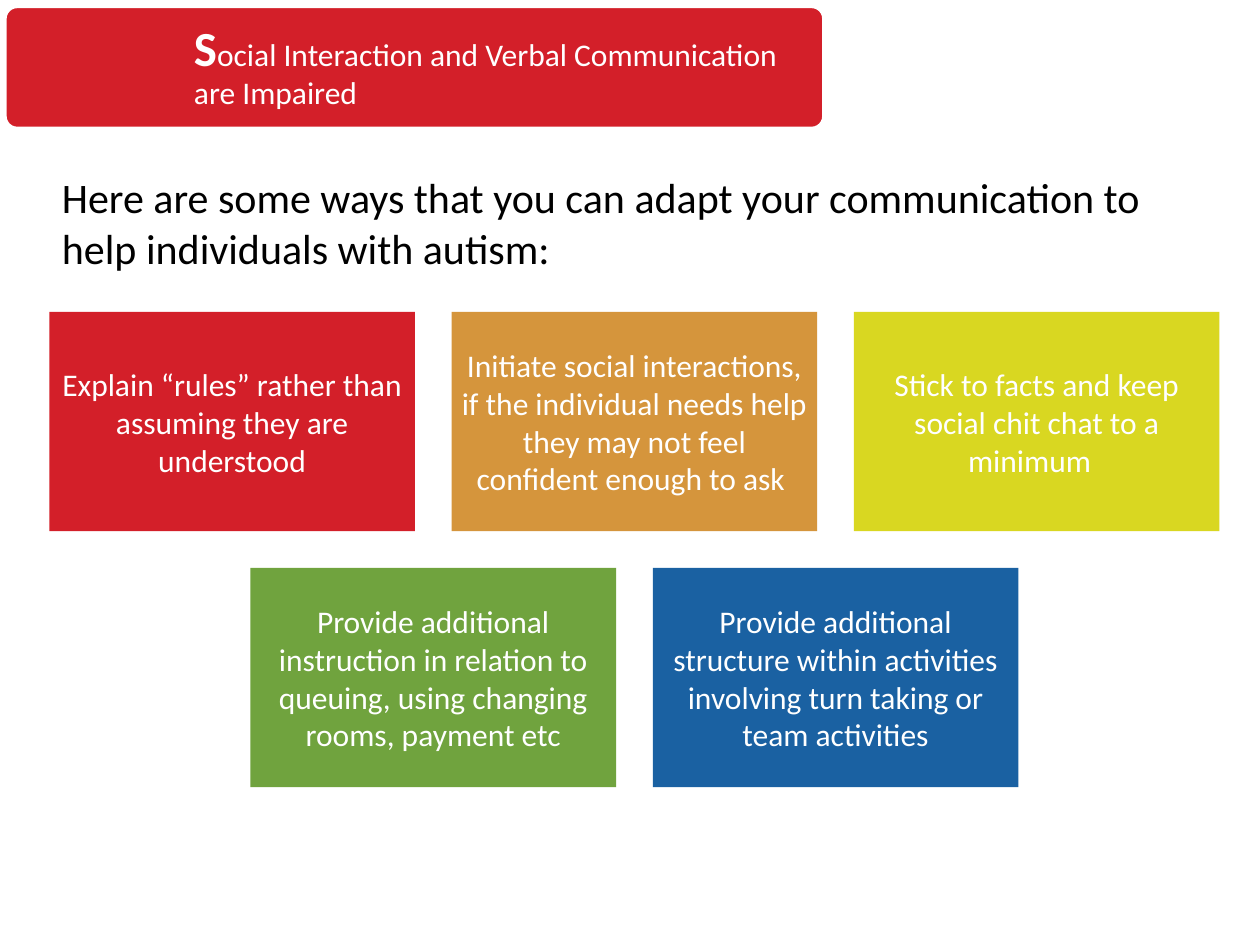
from dataclasses import dataclass

import pptx
import pptx.dml.color
import pptx.enum.shapes
import pptx.enum.text
import pptx.util
from pptx.util import Cm

WHITE = "FFFFFF"
BLACK = "000000"
RED = "D31F29"
CARD_WIDTH, CARD_HEIGHT, GAP = 7.37, 4.42, 0.74
CARDS_CENTER, CARDS_TOP = 12.79, 6.29


@dataclass
class Box:
    left: float
    top: float
    width: float
    height: float

    def lengths(self) -> tuple:
        return Cm(self.left), Cm(self.top), Cm(self.width), Cm(self.height)


@dataclass
class Card:
    text: str
    fill: str


CARD_ROWS = [
    [
        Card("Explain “rules” rather than assuming they are understood", RED),
        Card("Initiate social interactions, if the individual needs help "
             "they may not feel confident enough to ask ", "D5953C"),
        Card("Stick to facts and keep social chit chat to a minimum  ", "D9D721"),
    ],
    [
        Card("Provide additional instruction in relation to queuing, "
             "using changing rooms, payment etc", "70A33E"),
        Card("Provide additional structure within activities involving "
             "turn taking or team activities", "1A61A2"),
    ],
]


def color(value: str) -> pptx.dml.color.RGBColor:
    return pptx.dml.color.RGBColor.from_string(value)


def add_text(paragraph, text: str, *, size: float = 18, fill: str = WHITE,
             bold: bool = False) -> None:
    run = paragraph.add_run()
    run.text = text
    run.font.name = "Calibri"
    run.font.size = pptx.util.Pt(size)
    run.font.bold = bold
    run.font.color.rgb = color(fill)


def format_frame(frame, *, inset: float, middle: bool = True) -> None:
    anchors = pptx.enum.text.MSO_ANCHOR
    frame.word_wrap = True
    frame.auto_size = pptx.enum.text.MSO_AUTO_SIZE.NONE
    frame.vertical_anchor = anchors.MIDDLE if middle else anchors.TOP
    frame.margin_left = frame.margin_right = Cm(inset)
    frame.margin_top = frame.margin_bottom = Cm(inset)


def add_block(slide, kind, box: Box, fill: str):
    shape = slide.shapes.add_shape(kind, *box.lengths())
    shape.shadow.inherit = False
    shape.fill.solid()
    shape.fill.fore_color.rgb = color(fill)
    shape.line.fill.background()
    return shape


def add_card(slide, card: Card, left: float, top: float) -> None:
    box = Box(left, top, CARD_WIDTH, CARD_HEIGHT)
    shape = add_block(slide, pptx.enum.shapes.MSO_SHAPE.RECTANGLE, box, card.fill)
    format_frame(shape.text_frame, inset=0.17)
    paragraph = shape.text_frame.paragraphs[0]
    paragraph.alignment = pptx.enum.text.PP_ALIGN.CENTER
    add_text(paragraph, card.text)


def add_cards(slide) -> None:
    for row_index, row in enumerate(CARD_ROWS):
        row_width = len(row) * (CARD_WIDTH + GAP) - GAP
        top = CARDS_TOP + row_index * (CARD_HEIGHT + GAP)
        for column, card in enumerate(row):
            left = CARDS_CENTER - row_width / 2 + column * (CARD_WIDTH + GAP)
            add_card(slide, card, left, top)


def add_introduction(slide) -> None:
    text_box = slide.shapes.add_textbox(*Box(1, 3.33, 23.6, 2.31).lengths())
    frame = text_box.text_frame
    format_frame(frame, inset=0.25, middle=False)
    frame.margin_top = frame.margin_bottom = Cm(0.13)
    add_text(frame.paragraphs[0],
             "Here are some ways that you can adapt your communication to "
             "help individuals with autism:", size=24, fill=BLACK)


def add_title(slide) -> None:
    banner = add_block(slide, pptx.enum.shapes.MSO_SHAPE.ROUNDED_RECTANGLE,
                       Box(0.1, 0.13, 16.51, 2.46), RED)
    banner.adjustments[0] = 0.1
    banner.line.color.rgb = color(WHITE)
    banner.line.width = pptx.util.Pt(2)

    title = slide.shapes.title
    banner.element.addnext(title.element)
    title.left, title.top, title.width, title.height = Box(3.61, 0.13, 12.98, 2.46).lengths()
    format_frame(title.text_frame, inset=0.3)
    paragraph = title.text_frame.paragraphs[0]
    paragraph.alignment = pptx.enum.text.PP_ALIGN.LEFT
    paragraph.line_spacing = 0.9
    add_text(paragraph, "S", size=28, bold=True)
    add_text(paragraph, "ocial Interaction and Verbal Communication are Impaired")


def main() -> None:
    presentation = pptx.Presentation()
    presentation.slide_width = Cm(25.4)
    presentation.slide_height = Cm(19.05)
    slide = presentation.slides.add_slide(presentation.slide_layouts[5])
    add_cards(slide)
    add_introduction(slide)
    add_title(slide)
    presentation.save("out.pptx")


if __name__ == "__main__":
    main()
